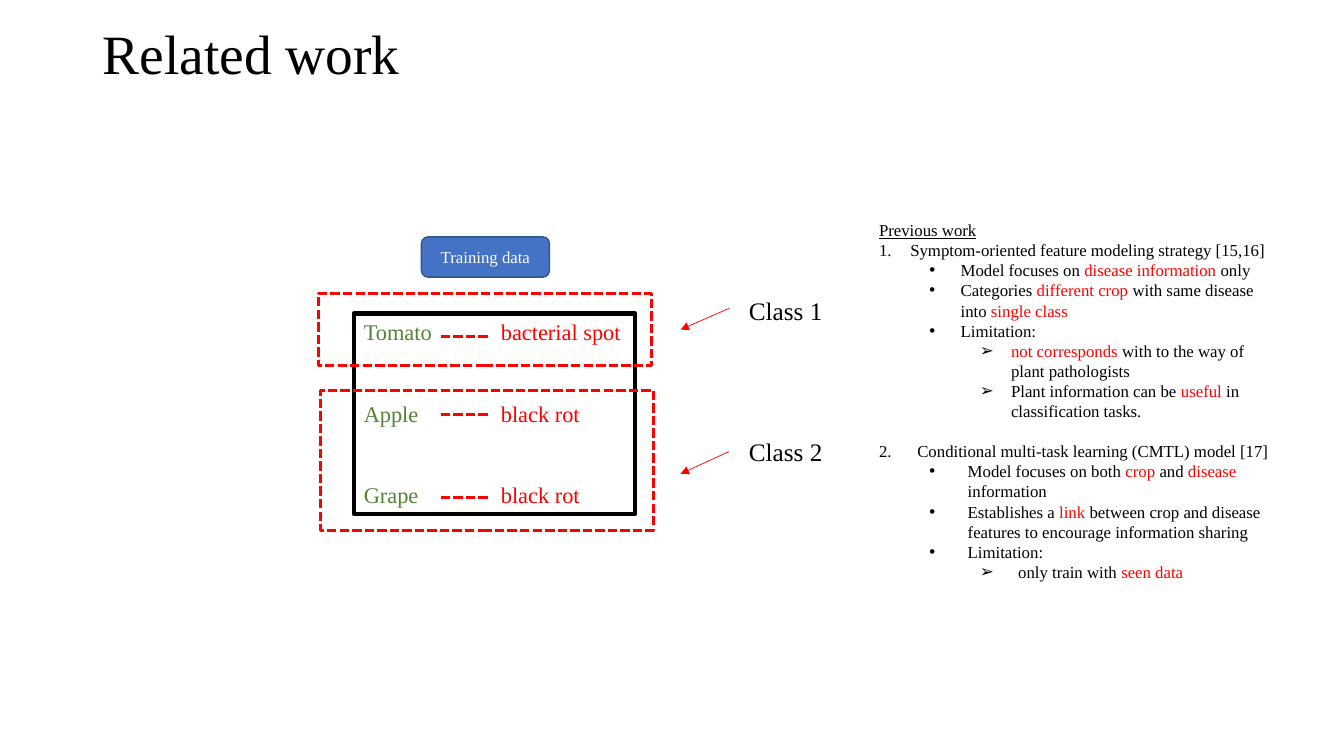
from lxml.etree import SubElement
from pptx import Presentation
from pptx.dml.color import RGBColor
from pptx.enum.dml import MSO_LINE
from pptx.enum.shapes import MSO_CONNECTOR, MSO_SHAPE
from pptx.enum.text import MSO_ANCHOR, PP_ALIGN
from pptx.oxml.ns import qn
from pptx.util import Inches, Pt

FONT = "Times New Roman"
BLACK, WHITE, RED, GREEN = "000000", "FFFFFF", "FF0000", "548235"
BLUE, DARK_BLUE = "4472C4", "325491"

STRATEGY_NOTES = [
    (0, "Symptom-oriented feature modeling strategy [15,16]"),
    (1, "Model focuses on *disease information *only"),
    (1, "Categories *different crop *with same disease into *single class"),
    (1, "Limitation:"),
    (2, "*not corresponds *with to the way of plant pathologists"),
    (2, "Plant information can be *useful* in classification tasks."),
]
CMTL_NOTES = [
    (0, "Conditional multi-task learning (CMTL) model [17]"),
    (1, "Model focuses on both *crop *and *disease* information"),
    (1, "Establishes a *link* between crop and disease features "
        "to encourage information sharing"),
    (1, "Limitation:"),
    (2, "only train with *seen data"),
]
CROPS = [("Tomato", "bacterial spot", 3.34), ("Apple", "black rot", 4.11),
         ("Grape", "black rot", 4.94)]
CLASSES = [("Class 1", 2.88, 3.06, 3.27), ("Class 2", 4.28, 4.48, 4.7)]
CLASS_FRAMES = [(3.16, 2.91, 3.3, 0.72), (3.18, 3.87, 3.3, 1.39)]


def rgb(color):
    return RGBColor.from_string(color)


def add_run(paragraph, text, size, color=BLACK):
    run = paragraph.add_run()
    run.text = text
    run.font.name = FONT
    run.font.size = Pt(size)
    run.font.color.rgb = rgb(color)
    return run


def add_label(slide, box, text, size, wrap=True, anchor=MSO_ANCHOR.TOP):
    label = slide.shapes.add_textbox(*map(Inches, box))
    frame = label.text_frame
    frame.word_wrap = wrap
    frame.vertical_anchor = anchor
    run = add_run(frame.paragraphs[0], text, size)
    return frame, run


def style_line(line, color, width, dashed=False):
    line.color.rgb = rgb(color)
    line.width = Pt(width)
    if dashed:
        line.dash_style = MSO_LINE.SQUARE_DOT


def add_box(slide, kind, box, fill, line_color, width, dashed=False):
    shape = slide.shapes.add_shape(kind, *map(Inches, box))
    shape.shadow.inherit = False
    if fill:
        shape.fill.solid()
        shape.fill.fore_color.rgb = rgb(fill)
    else:
        shape.fill.background()
    style_line(shape.line, line_color, width, dashed)
    return shape


def add_line(slide, ends, width, dashed=False, arrow=False):
    connector = slide.shapes.add_connector(
        MSO_CONNECTOR.STRAIGHT, *map(Inches, ends))
    style_line(connector.line, RED, width, dashed)
    if arrow:
        SubElement(connector.line._get_or_add_ln(), qn("a:tailEnd"), type="triangle")
    SubElement(connector._element.spPr, qn("a:effectLst"))


def add_note(frame, level, text, number, hanging):
    paragraph = frame.add_paragraph()
    paragraph.level = level
    props = paragraph._p.get_or_add_pPr()
    props.set("marL", str(Inches(hanging + level * 0.5)))
    props.set("indent", str(-Inches(hanging)))
    bullet_color = SubElement(props, qn("a:buClr"))
    SubElement(bullet_color, qn("a:srgbClr"), val=BLACK)
    if level == 0:
        SubElement(props, qn("a:buFont"), typeface=FONT)
        SubElement(props, qn("a:buAutoNum"), type="arabicPeriod", startAt=str(number))
    else:
        SubElement(props, qn("a:buFont"), typeface="Arial")
        SubElement(props, qn("a:buChar"), char="•" if level == 1 else "➢")
    for index, part in enumerate(text.split("*")):
        if part:
            add_run(paragraph, part, 12, RED if index % 2 else BLACK)
    return paragraph


def add_previous_work(slide):
    frame, heading = add_label(slide, (8.62, 2.13, 4.16, 3.94), "Previous work", 12)
    heading.font.underline = True
    sections = [(STRATEGY_NOTES, 0.31, 0), (CMTL_NOTES, 0.38, 14)]
    for number, (notes, hanging, gap) in enumerate(sections, 1):
        for level, text in notes:
            paragraph = add_note(frame, level, text, number, hanging)
            if level == 0:
                paragraph.space_before = Pt(gap)


def add_crop_table(slide):
    crops = add_box(slide, MSO_SHAPE.RECTANGLE, (3.51, 3.11, 2.79, 1.99), WHITE, BLACK, 3)
    frame = crops.text_frame
    frame.word_wrap = True
    frame.vertical_anchor = MSO_ANCHOR.TOP
    for index, (crop, disease, _) in enumerate(CROPS):
        paragraph = frame.add_paragraph() if index else frame.paragraphs[0]
        paragraph.alignment = PP_ALIGN.LEFT
        paragraph.space_before = Pt(39 if index else 0)
        tabs = SubElement(paragraph._p.get_or_add_pPr(), qn("a:tabLst"))
        SubElement(tabs, qn("a:tab"), pos=str(Inches(1.36)), algn="l")
        add_run(paragraph, crop + "\t", 16, GREEN)
        add_run(paragraph, disease, 16, RED)


def add_training_button(slide):
    button = add_box(slide, MSO_SHAPE.ROUNDED_RECTANGLE, (4.18, 2.35, 1.27, 0.4),
                     BLUE, DARK_BLUE, 1)
    button.text_frame.vertical_anchor = MSO_ANCHOR.MIDDLE
    paragraph = button.text_frame.paragraphs[0]
    paragraph.alignment = PP_ALIGN.CENTER
    add_run(paragraph, "Training data", 12, WHITE)


def main():
    deck = Presentation()
    deck.slide_width, deck.slide_height = Inches(13.33), Inches(7.5)
    slide = deck.slides.add_slide(deck.slide_layouts[6])

    title, _ = add_label(slide, (0.92, 0.22, 11.5, 0.69), "Related work", 39.6,
                         anchor=MSO_ANCHOR.MIDDLE)
    title.paragraphs[0].line_spacing = 0.9
    add_previous_work(slide)
    add_crop_table(slide)
    add_training_button(slide)
    for frame in CLASS_FRAMES:
        add_box(slide, MSO_SHAPE.RECTANGLE, frame, None, RED, 2.25, dashed=True)
    for _, _, y in CROPS:
        add_line(slide, (4.37, y, 4.86, y), 2.25, dashed=True)
    for name, top, arrow_start, arrow_end in CLASSES:
        add_line(slide, (7.23, arrow_start, 6.75, arrow_end), 0.5, arrow=True)
        add_label(slide, (7.33, top, 0.94, 0.4), name, 18, wrap=False)

    deck.save("out.pptx")


if __name__ == "__main__":
    main()
